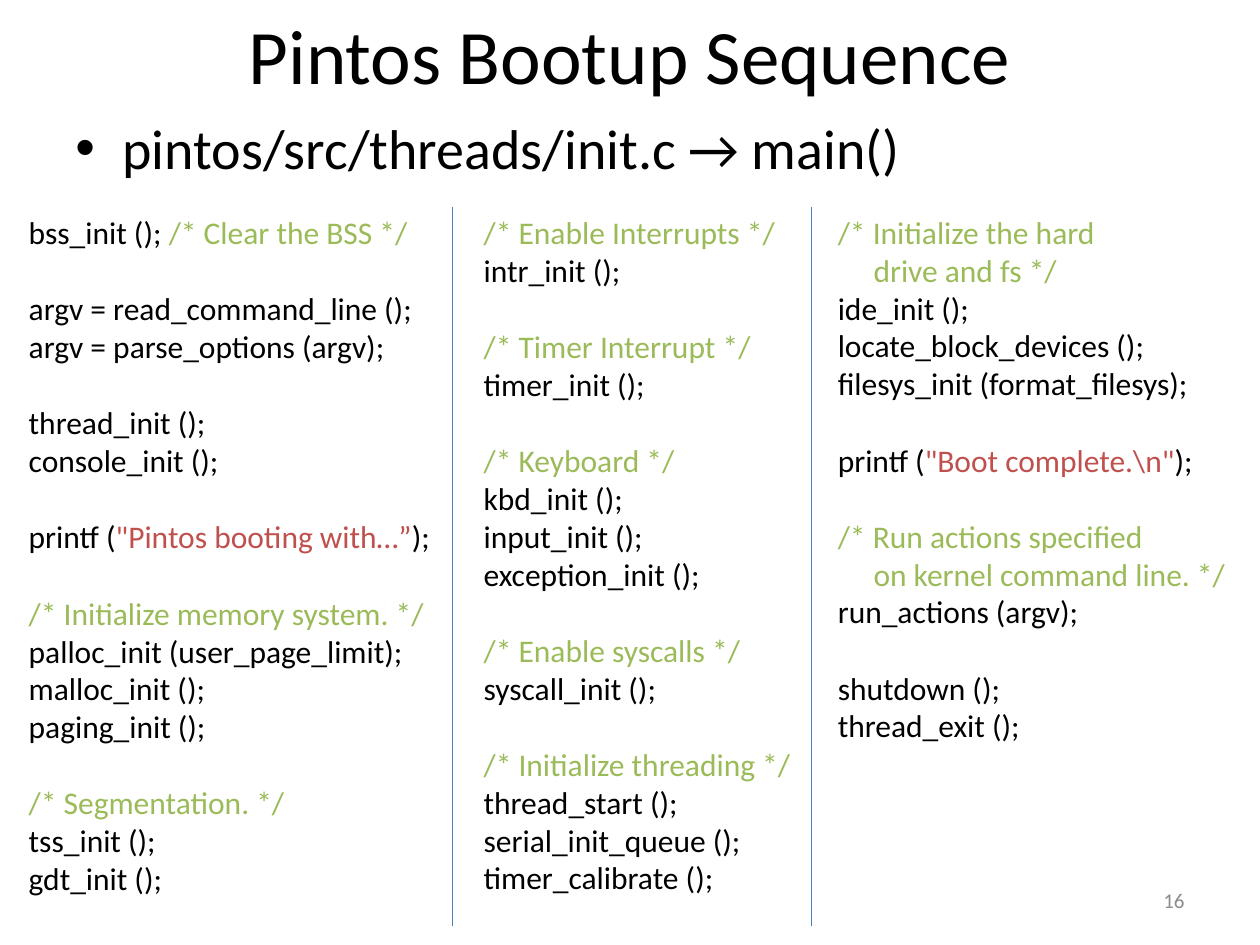
from lxml import etree
from pptx import Presentation
from pptx.dml.color import RGBColor
from pptx.enum.shapes import MSO_CONNECTOR
from pptx.enum.text import MSO_ANCHOR, PP_ALIGN
from pptx.oxml.ns import qn
from pptx.util import Cm, Pt

BLACK = RGBColor(0x00, 0x00, 0x00)
GREEN = RGBColor(0x9B, 0xBB, 0x59)
RED = RGBColor(0xC0, 0x50, 0x4D)
GRAY = RGBColor(0x8C, 0x8C, 0x8C)
BLUE = RGBColor(0x4B, 0x7E, 0xBC)
LEFT, MID, RIGHT = PP_ALIGN.LEFT, PP_ALIGN.CENTER, PP_ALIGN.RIGHT
TOP, CENTER = MSO_ANCHOR.TOP, MSO_ANCHOR.MIDDLE
STRAIGHT = MSO_CONNECTOR.STRAIGHT

# Each column is a list of blocks; a line is a list of its parts
START = [
    [["bss_init (); ", "/* Clear the BSS */"]],
    [["argv = read_command_line ();"], ["argv = parse_options (argv);"]],
    [["thread_init ();"], ["console_init ();"]],
    [["printf (", '"Pintos booting with…”', ");"]],
    [["/* Initialize memory system. */"], ["palloc_init (user_page_limit);"],
     ["malloc_init ();"], ["paging_init ();"]],
    [["/* Segmentation. */"], ["tss_init ();"], ["gdt_init ();"]],
]
DEVICES = [
    [["/* Enable Interrupts */"], ["intr_init ();"]],
    [["/* Timer Interrupt */"], ["timer_init ();"]],
    [["/* Keyboard */"], ["kbd_init ();"], ["input_init ();"],
     ["exception_init ();"]],
    [["/* Enable syscalls */"], ["syscall_init ();"]],
    [["/* Initialize threading */"], ["thread_start ();"],
     ["serial_init_queue ();"], ["timer_calibrate ();"]],
]
FINISH = [
    [["/* Initialize the hard"], ["drive and fs */"], ["ide_init ();"],
     ["locate_block_devices ();"], ["filesys_init (format_filesys);"]],
    [["printf (", '"Boot complete.\\n"', ");"]],
    [["/* Run actions specified"], ["on kernel command line. */"],
     ["run_actions (argv);"]],
    [["shutdown ();"], ["thread_exit ();"]],
]


def tint(part):
    """Pick the syntax colour of one part of a code line."""
    if part.startswith("/*") or part.endswith("*/"):
        return GREEN
    return RED if part.startswith('"') else BLACK


def write(para, text, size=18, color=BLACK, font="Calibri", align=LEFT):
    """Add a formatted run to a paragraph."""
    para.alignment = align
    run = para.add_run()
    run.text = text
    run.font.name = font
    run.font.size = Pt(size)
    run.font.color.rgb = color


class Deck:
    code_top = 4.17
    rule_end = 18.67
    gap = Pt(22)          # one line of code
    hang = Cm(0.72)       # indent of a comment's second line

    def __init__(self):
        self.prs = Presentation()
        self.prs.slide_width, self.prs.slide_height = Cm(25.4), Cm(19.05)
        self.slide = self.prs.slides.add_slide(self.prs.slide_layouts[5])

    def title(self, text, x, y, w, h):
        shape = self.slide.shapes.title
        shape.left, shape.top, shape.width, shape.height = map(Cm, (x, y, w, h))
        shape.text_frame.vertical_anchor = CENTER
        write(shape.text_frame.paragraphs[0], text, size=44, align=MID)

    def box(self, x, y, w, h, anchor=TOP, wrap=True):
        frame = self.slide.shapes.add_textbox(*map(Cm, (x, y, w, h))).text_frame
        frame.word_wrap = wrap
        frame.vertical_anchor = anchor
        return frame

    def bullet(self, text, x, y, w, h):
        para = self.box(x, y, w, h).paragraphs[0]
        para.space_before = Pt(6.4)
        write(para, text, size=32)
        props = para._p.get_or_add_pPr()
        props.set("marL", str(Cm(0.95)))
        props.set("indent", str(-Cm(0.95)))
        etree.SubElement(props, qn("a:buFont"), typeface="Arial")
        etree.SubElement(props, qn("a:buChar"), char="•")

    def code(self, blocks, x, w, h, wrap=True):
        frame = self.box(x, self.code_top, w, h, wrap=wrap)
        para = frame.paragraphs[0]
        for b, block in enumerate(blocks):
            for n, line in enumerate(block):
                if b or n:
                    para = frame.add_paragraph()
                if b and n == 0:
                    para.space_before = self.gap
                if line[0].endswith("*/") and not line[0].startswith("/*"):
                    para._p.get_or_add_pPr().set("marL", str(self.hang))
                for part in line:
                    write(para, part, color=tint(part))

    def rule(self, x):
        line = self.slide.shapes.add_connector(
            STRAIGHT, Cm(x), Cm(self.code_top), Cm(x), Cm(self.rule_end))
        line.line.color.rgb = BLUE
        line.line.width = Pt(0.75)
        etree.SubElement(line._element.spPr, qn("a:effectLst"))


def main():
    deck = Deck()

    # Heading
    deck.title("Pintos Bootup Sequence", 1.27, 0, 22.86, 2.16)
    deck.bullet("pintos/src/threads/init.c → main()", 1.27, 2.16, 22.86, 1.8)

    # Page number
    page = deck.box(18.2, 17.65, 5.93, 1.01, anchor=CENTER)
    write(page.paragraphs[0], "16", size=12, color=GRAY, align=RIGHT)

    # Code columns
    deck.code(START, 0.33, 9.53, 14.1)
    deck.code(DEVICES, 9.5, 7.01, 14.1)
    deck.code(FINISH, 16.64, 8.43, 11.79, wrap=False)

    # Column rules
    for x in (9.12, 16.36):
        deck.rule(x)

    deck.prs.save("out.pptx")


if __name__ == "__main__":
    main()
